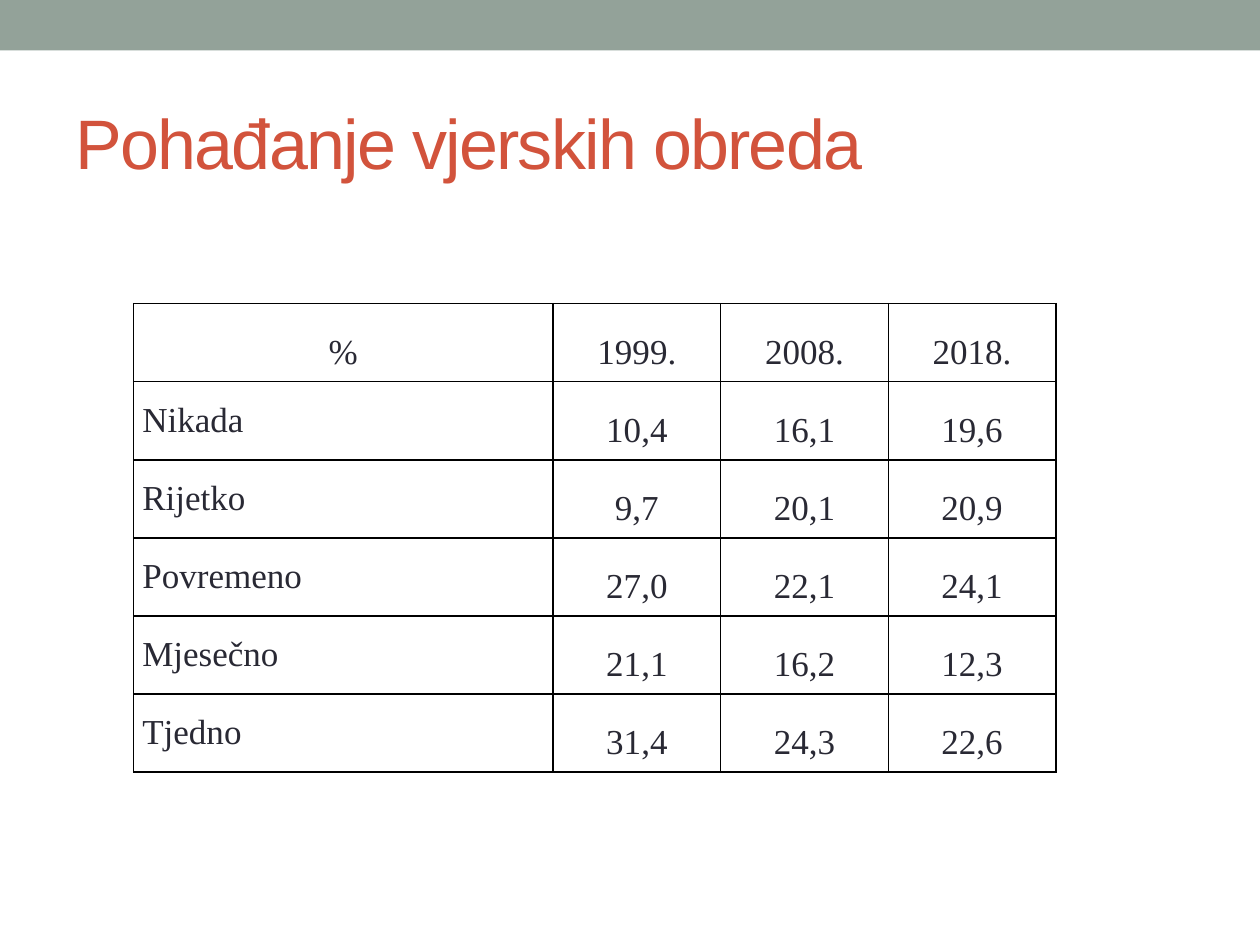
"""Build a slide with a table of attendance at religious services by year."""
from dataclasses import dataclass
from typing import NamedTuple

from lxml import etree
from pptx import Presentation
from pptx.dml.color import RGBColor
from pptx.enum.shapes import MSO_SHAPE
from pptx.enum.text import MSO_ANCHOR, MSO_AUTO_SIZE, PP_ALIGN
from pptx.oxml.ns import qn
from pptx.util import Inches, Pt

RECTANGLE = MSO_SHAPE.RECTANGLE
TOP, MIDDLE = MSO_ANCHOR.TOP, MSO_ANCHOR.MIDDLE
LEFT, CENTER, JUSTIFY = PP_ALIGN.LEFT, PP_ALIGN.CENTER, PP_ALIGN.JUSTIFY
NO_AUTOFIT = MSO_AUTO_SIZE.NONE
TITLE_ONLY = 5
WIDTH, HEIGHT = Inches(10), Inches(7.5)


@dataclass(frozen=True)
class Theme:
    band: str = "93A299"
    title: str = "D2533C"
    text: str = "292934"
    border: str = "000000"
    background: str = "FFFFFF"
    title_font: str = "Arial"
    table_font: str = "Times New Roman"
    title_size: int = 40
    table_size: int = 20
    border_width: int = 1


class Attendance(NamedTuple):
    label: str
    shares: tuple[str, str, str]


THEME = Theme()
HEADER = Attendance("%", ("1999.", "2008.", "2018."))
ANSWERS = (
    Attendance("Nikada", ("10,4", "16,1", "19,6")),
    Attendance("Rijetko", ("9,7", "20,1", "20,9")),
    Attendance("Povremeno", ("27,0", "22,1", "24,1")),
    Attendance("Mjesečno", ("21,1", "16,2", "12,3")),
    Attendance("Tjedno", ("31,4", "24,3", "22,6")),
)
LABEL_WIDTH, YEAR_WIDTH, ROW_HEIGHT = Inches(3.33), Inches(1.33), Inches(0.62)


def write(frame, text: str, *, font: str, size: int, color: str, align=LEFT,
          line_spacing: float = 1.0, before: float = 0, tracking: float = 0) -> None:
    """Put one formatted paragraph into a text frame."""
    paragraph = frame.paragraphs[0]
    paragraph.alignment = align
    paragraph.line_spacing = line_spacing
    paragraph.space_before = Pt(before)
    run = paragraph.add_run()
    run.text = text
    run.font.name = font
    run.font.size = Pt(size)
    run.font.color.rgb = RGBColor.from_string(color)
    if tracking:
        run.font._element.set("spc", str(int(tracking * 100)))


def add_borders(cell) -> None:
    """Draw a solid line on each side of a cell."""
    properties = cell._tc.get_or_add_tcPr()
    for position, side in enumerate(("a:lnL", "a:lnR", "a:lnT", "a:lnB")):
        line = etree.Element(qn(side), w=str(Pt(THEME.border_width)))
        fill = etree.SubElement(line, qn("a:solidFill"))
        etree.SubElement(fill, qn("a:srgbClr"), val=THEME.border)
        properties.insert(position, line)


def fill_cell(cell, text: str, *, align=CENTER, anchor=MIDDLE) -> None:
    """Write and format one table cell."""
    cell.margin_left = cell.margin_right = Inches(0.07)
    cell.margin_top = cell.margin_bottom = 0
    cell.vertical_anchor = anchor
    cell.fill.background()
    write(cell.text_frame, text, font=THEME.table_font, size=THEME.table_size,
          color=THEME.text, align=align, line_spacing=1.5, before=6)
    add_borders(cell)


def add_band(slide) -> None:
    """Draw the coloured band along the top edge."""
    band = slide.shapes.add_shape(RECTANGLE, 0, 0, WIDTH, Inches(0.4))
    band.shadow.inherit = False
    band.fill.solid()
    band.fill.fore_color.rgb = RGBColor.from_string(THEME.band)
    band.line.fill.background()


def add_title(slide, text: str) -> None:
    """Place and format the title placeholder."""
    title = slide.shapes.title
    title.left, title.top = int(WIDTH * 0.05), Inches(0.58)
    title.width, title.height = int(WIDTH * 0.9), Inches(1.08)
    title.text_frame.auto_size = NO_AUTOFIT
    title.text_frame.vertical_anchor = MIDDLE
    write(title.text_frame, text, font=THEME.title_font, size=THEME.title_size,
          color=THEME.title, tracking=-1)


def add_attendance(slide) -> None:
    """Add the table of answers by year."""
    rows = (HEADER, *ANSWERS)
    widths = (LABEL_WIDTH, *[YEAR_WIDTH] * len(HEADER.shares))
    table = slide.shapes.add_table(
        len(rows), len(widths), Inches(1.06), Inches(2.41),
        sum(widths), ROW_HEIGHT * len(rows)).table
    table.horz_banding = False
    for column, width in zip(table.columns, widths):
        column.width = width
    for index, answer in enumerate(rows):
        table.rows[index].height = ROW_HEIGHT
        if answer is HEADER:
            fill_cell(table.cell(index, 0), answer.label)
        else:
            fill_cell(table.cell(index, 0), answer.label, align=JUSTIFY, anchor=TOP)
        for column, share in enumerate(answer.shares, start=1):
            fill_cell(table.cell(index, column), share)
    table.first_row = False


def main() -> None:
    """Assemble and save the slide."""
    deck = Presentation()
    deck.slide_width, deck.slide_height = WIDTH, HEIGHT
    slide = deck.slides.add_slide(deck.slide_layouts[TITLE_ONLY])
    slide.background.fill.solid()
    slide.background.fill.fore_color.rgb = RGBColor.from_string(THEME.background)
    add_band(slide)
    add_title(slide, "Pohađanje vjerskih obreda")
    add_attendance(slide)
    deck.save("out.pptx")


if __name__ == "__main__":
    main()
